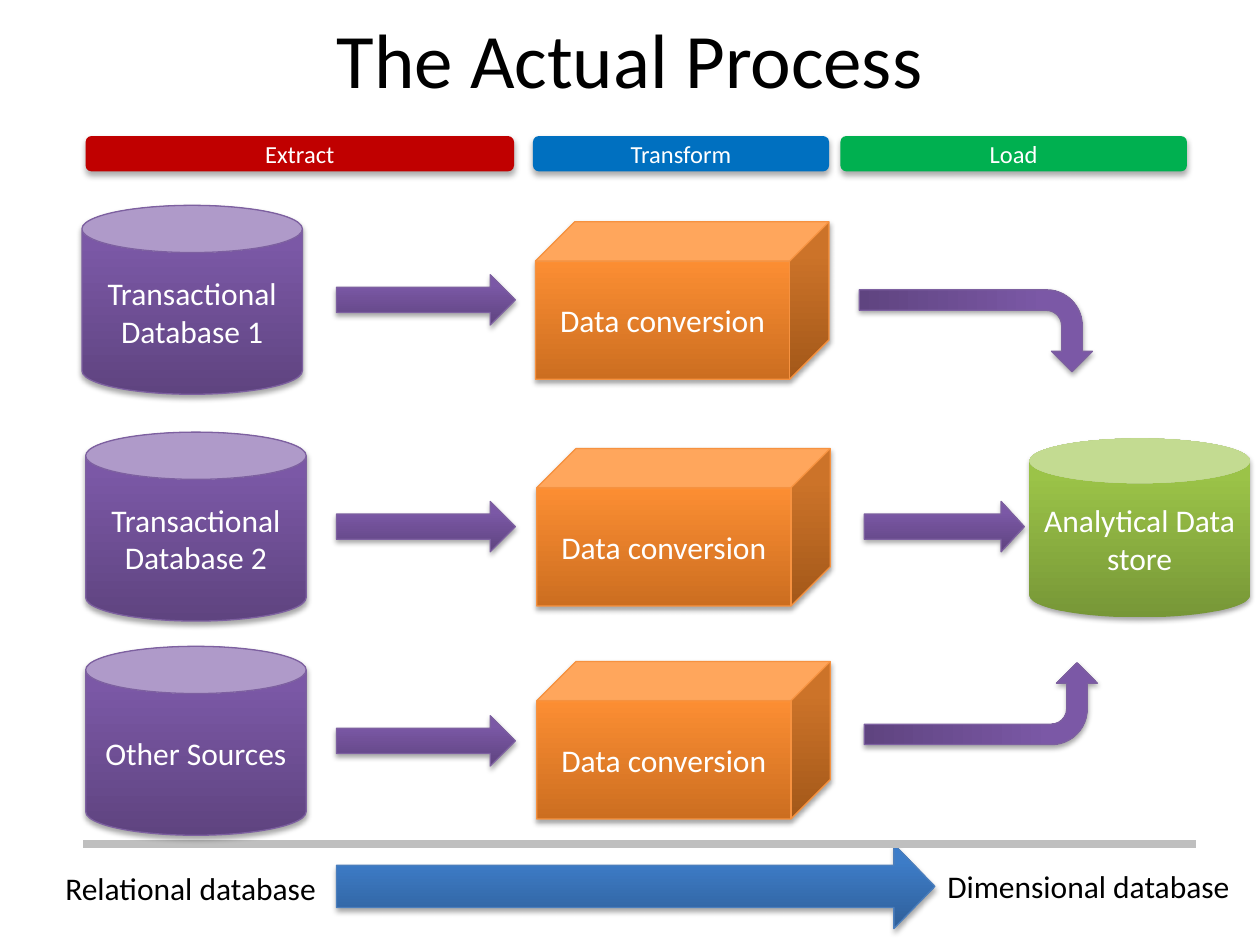
from copy import deepcopy

from lxml import etree
from pptx import Presentation
from pptx import util as u
from pptx.dml.color import RGBColor
from pptx.enum import shapes, text
from pptx.oxml import ns

PX = u.Inches(1) // 100
FONT = "Calibri"
BLACK = RGBColor(0x00, 0x00, 0x00)
WHITE = RGBColor(0xFF, 0xFF, 0xFF)
RED = RGBColor(0xC0, 0x00, 0x00)
BLUE = RGBColor(0x00, 0x70, 0xC0)
GREEN = RGBColor(0x00, 0xB0, 0x50)
GREY = RGBColor(0xBF, 0xBF, 0xBF)
PURPLE_LINE = RGBColor(0x7D, 0x60, 0xA0)
ORANGE_LINE = RGBColor(0xF6, 0x92, 0x40)
BLUE_LINE = RGBColor(0x4B, 0x7E, 0xBC)
PURPLE = (RGBColor(0x5F, 0x44, 0x80), RGBColor(0x7B, 0x58, 0xA6), RGBColor(0x7C, 0x57, 0xA8))
LIME = (RGBColor(0x77, 0x97, 0x37), RGBColor(0x9B, 0xC3, 0x48), RGBColor(0x9D, 0xC7, 0x46))
ORANGE = (RGBColor(0xCC, 0x6E, 0x20), RGBColor(0xFF, 0x90, 0x34), RGBColor(0xFF, 0x91, 0x36))
AZURE = (RGBColor(0x2F, 0x5F, 0x99), RGBColor(0x3D, 0x7C, 0xC7), RGBColor(0x3A, 0x7C, 0xCB))
STOPS = (0, 0.8, 1)
SOFT_SHADOW = (3.1, 1.8, 35)
WIDE_SHADOW = (3.5, 2.2, 32)
MSO = shapes.MSO_SHAPE


class ProcessSlide:
    def __init__(self, prs):
        self.s = prs.slides.add_slide(prs.slide_layouts[5])

    def add_words(self, tf, words, size, color, align=text.PP_ALIGN.CENTER):
        p = tf.paragraphs[0]
        p.alignment = align
        r = p.add_run()
        r.text = words
        r.font.name = FONT
        r.font.size = u.Pt(size)
        r.font.color.rgb = color

    def title(self, box, words):
        sp = self.s.shapes.title
        sp.left, sp.top, sp.width, sp.height = (v * PX for v in box)
        sp.text_frame.vertical_anchor = text.MSO_ANCHOR.MIDDLE
        self.add_words(sp.text_frame, words, 44, BLACK)

    def shadow(self, sp, blur, dist, alpha):
        sp.shadow.inherit = False
        effects = sp.element.spPr.find(ns.qn("a:effectLst"))
        outer = etree.SubElement(effects, ns.qn("a:outerShdw"),
                                 blurRad=str(u.Pt(blur)), dist=str(u.Pt(dist)),
                                 dir="5400000", rotWithShape="0")
        color = etree.SubElement(outer, ns.qn("a:srgbClr"), val="000000")
        etree.SubElement(color, ns.qn("a:alpha"), val=str(alpha * 1000))

    def gradient(self, sp, colors):
        sp.fill.gradient()
        sp.fill.gradient_angle = 90
        stops = sp.element.spPr.find(ns.qn("a:gradFill")).find(ns.qn("a:gsLst"))
        stops.append(deepcopy(stops[-1]))
        for stop, position, color in zip(sp.fill.gradient_stops, STOPS, colors):
            stop.position = position
            stop.color.rgb = color

    def shape(self, kind, box, fill, line=None, words="", size=18, shadow=SOFT_SHADOW):
        sp = self.s.shapes.add_shape(kind, *(v * PX for v in box))
        if isinstance(fill, RGBColor):
            sp.fill.solid()
            sp.fill.fore_color.rgb = fill
        else:
            self.gradient(sp, fill)
        if line is None:
            sp.line.fill.background()
        else:
            sp.line.color.rgb = line
            sp.line.width = u.Pt(0.75)
        self.shadow(sp, *shadow)
        if words:
            sp.text_frame.vertical_anchor = text.MSO_ANCHOR.MIDDLE
            self.add_words(sp.text_frame, words, size, WHITE)
        return sp

    def stage(self, left, width, words, color):
        self.shape(MSO.ROUNDED_RECTANGLE, (left, 108, width, 28), color,
                   words=words, size=14, shadow=WIDE_SHADOW)

    def arrow(self, box, fill=PURPLE, line=PURPLE_LINE, head=0.5):
        sp = self.shape(MSO.RIGHT_ARROW, box, fill, line)
        sp.adjustments[1] = head

    def bent_arrow(self, left, top, rotation, flipped=False):
        sp = self.shape(MSO.BENT_ARROW, (left, top, 65, 185), PURPLE, PURPLE_LINE)
        sp.rotation = rotation
        if flipped:
            sp.element.spPr.find(ns.qn("a:xfrm")).set("flipV", "1")

    def label(self, box, words):
        tf = self.s.shapes.add_textbox(*(v * PX for v in box)).text_frame
        tf.word_wrap = False
        tf.auto_size = text.MSO_AUTO_SIZE.SHAPE_TO_FIT_TEXT
        self.add_words(tf, words, 18, BLACK, text.PP_ALIGN.LEFT)

    def rule(self, left, right, y):
        c = self.s.shapes.add_connector(shapes.MSO_CONNECTOR.STRAIGHT,
                                        left * PX, y * PX, right * PX, y * PX)
        c.line.color.rgb = GREY
        c.line.width = u.Pt(4.5)
        etree.SubElement(c.element.spPr, ns.qn("a:effectLst"))


def main():
    prs = Presentation()
    prs.slide_width, prs.slide_height = 1000 * PX, 750 * PX
    slide = ProcessSlide(prs)
    slide.title((50, 0, 900, 92), "The Actual Process")

    for stage in ((68, 340, "Extract", RED), (423, 235, "Transform", BLUE),
                  (667, 275, "Load", GREEN)):
        slide.stage(*stage)

    slide.label((42, 685, 221, 40), "Relational database")
    slide.label((742, 683, 247, 40), "Dimensional database")
    slide.arrow((267, 670, 475, 67), AZURE, BLUE_LINE, 0.486)
    slide.rule(66, 949, 670)

    sources = (("Transactional Database 1", 65, 163, 425, 176),
               ("Transactional Database 2", 68, 343, 426, 356),
               ("Other Sources", 68, 513, 426, 525))
    for words, can_left, can_top, cube_left, cube_top in sources:
        slide.shape(MSO.CAN, (can_left, can_top, 175, 150), PURPLE, PURPLE_LINE, words)
        slide.arrow((267, can_top + 55, 142, 40))
        slide.shape(MSO.CUBE, (cube_left, cube_top, 233, 125), ORANGE, ORANGE_LINE,
                    "Data conversion")

    slide.bent_arrow(742, 170, 90)
    slide.arrow((686, 398, 127, 40), head=0.46)
    slide.bent_arrow(746, 466, 270, flipped=True)
    slide.shape(MSO.CAN, (817, 348, 175, 142), LIME, words="Analytical Data store")

    prs.save("out.pptx")


if __name__ == "__main__":
    main()
